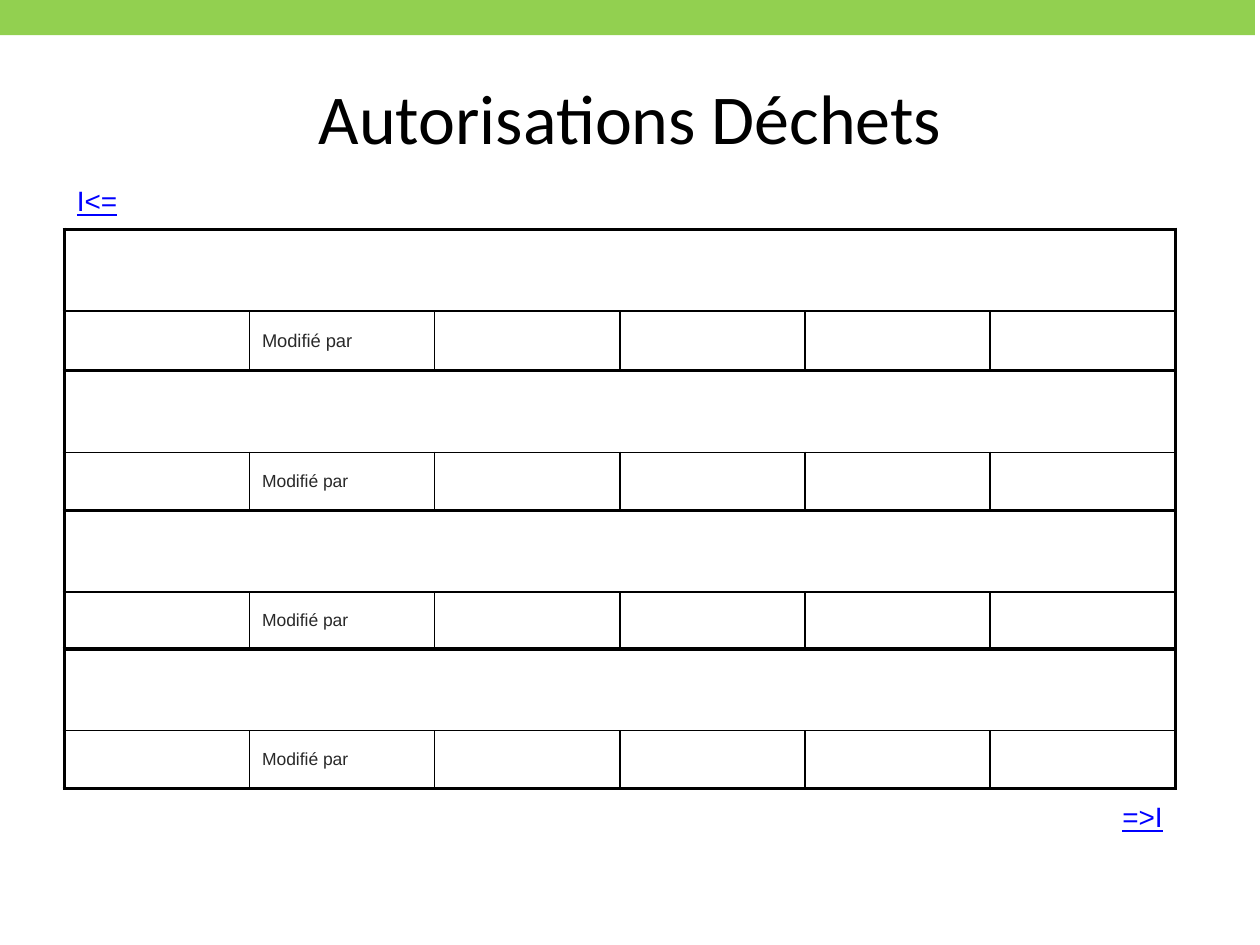
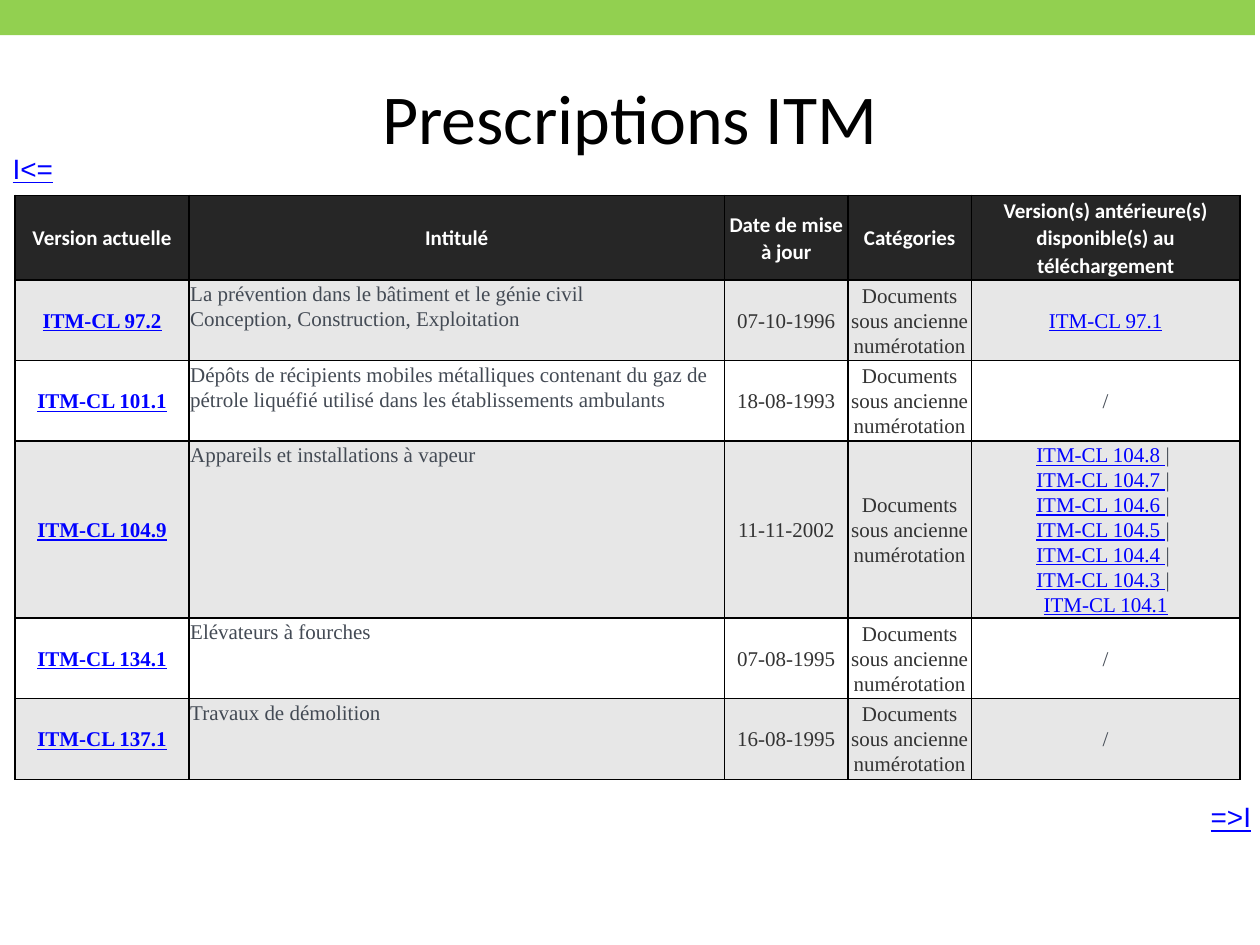
"""Build the waste authorisation and ITM prescription slides."""
from dataclasses import dataclass
from typing import Any

from lxml.etree import SubElement
from pptx import Presentation
from pptx.dml.color import RGBColor
from pptx.enum.shapes import MSO_SHAPE
from pptx.enum.text import MSO_ANCHOR, PP_ALIGN
from pptx.oxml.ns import qn
from pptx.slide import Slide
from pptx.table import Table, _Cell
from pptx.util import Inches, Pt

COLORS = {
    "band": "92D050", "black": "000000", "white": "FFFFFF", "link": "0000FF",
    "label": "292929", "header": "262626", "stripe": "E7E7E7",
    "body": "434A54", "detail": "333333",
}
PLAIN_TABLE_STYLE = "{2D5ABB26-0587-4C30-8999-92F81FD0307C}"
THIN, THICK = 1, 2.25
SIDES = ("L", "R", "T", "B")


@dataclass(frozen=True)
class Look:
    color: str
    size: float = 12
    name: str = "Times New Roman"
    bold: bool = False
    underline: bool = False


@dataclass(frozen=True)
class Span:
    text: str
    look: Look


@dataclass(frozen=True)
class Regulation:
    current: str
    heading: str
    updated: str
    earlier: tuple[str, ...] = ()


@dataclass(frozen=True)
class NavStrip:
    text: str
    left: float
    top: float
    height: float
    columns: tuple[float, ...]
    column: int
    align: PP_ALIGN


TITLE = Look("black", 40, "Calibri")
NAV = Look("link", 16, "Arial", underline=True)
HEADER = Look("white", 12, "Calibri", bold=True)
CURRENT = Look("link", bold=True, underline=True)
EARLIER = Look("link", underline=True)
BODY = Look("body")
DETAIL = Look("detail")

BACK, NEXT = "I<=", "=>I"
BAND_HEIGHTS = ((0.65, 0.47), (0.65, 0.46), (0.65, 0.45), (0.65, 0.46))
MODIFIED_SIZES = (10.5, 10, 10, 10)
NAV_STRIPS = (
    NavStrip(BACK, 0, 0.99, 0.71, (1.4, 1.4, 1.93, 2.38, 1.4, 1.4), 0, PP_ALIGN.LEFT),
    NavStrip(NEXT, 0.36, 6.11, 0.77, (1.38, 0.57, 2.48, 3.04, 0.82, 1.38), 5, PP_ALIGN.RIGHT),
)
CATEGORY = "Documents sous ancienne numérotation"
HEADINGS = ("Version actuelle", "Intitulé", "Date de mise à jour", "Catégories",
            "Version(s) antérieure(s) disponible(s) au téléchargement")
REGULATIONS = (
    Regulation("ITM-CL 97.2", "La prévention dans le bâtiment et le génie civil\n"
               "Conception, Construction, Exploitation", "07-10-1996", ("ITM-CL 97.1",)),
    Regulation("ITM-CL 101.1", "Dépôts de récipients mobiles métalliques contenant du gaz de "
               "pétrole liquéfié utilisé dans les établissements ambulants", "18-08-1993"),
    Regulation("ITM-CL 104.9", "Appareils et installations à vapeur", "11-11-2002",
               tuple(f"ITM-CL 104.{number}" for number in (8, 7, 6, 5, 4, 3, 1))),
    Regulation("ITM-CL 134.1", "Elévateurs à fourches", "07-08-1995"),
    Regulation("ITM-CL 137.1", "Travaux de démolition", "16-08-1995"),
)
COMPACT_CELL = dict.fromkeys(
    ("margin_left", "margin_top", "margin_right", "margin_bottom"), Inches(0.01))
COMPACT_PARAGRAPH = {"line_spacing": 1.07, "space_after": Pt(8)}


def apply_format(target: Any, values: dict[str, Any]) -> None:
    """Set every given attribute on the target."""
    for attribute, value in values.items():
        setattr(target, attribute, value)


def apply_look(font: Any, look: Look) -> None:
    """Give a font its face, size, emphasis and colour."""
    apply_format(font, {"name": look.name, "size": Pt(look.size),
                        "bold": look.bold, "underline": look.underline})
    font.color.rgb = RGBColor.from_string(COLORS[look.color])


def paint(fill: Any, color: str) -> None:
    """Apply a solid fill from the palette."""
    fill.solid()
    fill.fore_color.rgb = RGBColor.from_string(COLORS[color])


def write_cell(cell: _Cell, spans: list[Span], align: PP_ALIGN = PP_ALIGN.CENTER,
               anchor: MSO_ANCHOR = MSO_ANCHOR.MIDDLE) -> None:
    """Write styled spans, turning newlines into line breaks."""
    cell.vertical_anchor = anchor
    paragraph = cell.text_frame.paragraphs[0]
    paragraph.alignment = align
    for span in spans:
        for index, line in enumerate(span.text.split("\n")):
            if index:
                paragraph.add_line_break()
            if line:
                run = paragraph.add_run()
                run.text = line
                apply_look(run.font, span.look)


def draw_borders(cell: _Cell, widths: dict[str, float]) -> None:
    """Draw black borders on the given sides, in schema order."""
    properties = cell._tc.get_or_add_tcPr()
    for side in SIDES:
        if side in widths:
            line = SubElement(properties, qn(f"a:ln{side}"), w=str(Pt(widths[side])))
            solid = SubElement(line, qn("a:solidFill"))
            SubElement(solid, qn("a:srgbClr"), val=COLORS["black"])


def add_grid(slide: Slide, left: float, top: float, columns: tuple[float, ...],
             heights: tuple[float, ...]) -> Table:
    """Add an unstyled table with the given column widths and row heights."""
    table = slide.shapes.add_table(
        len(heights), len(columns), Inches(left), Inches(top),
        Inches(sum(columns)), Inches(sum(heights))).table
    apply_format(table, {"first_row": False, "horz_banding": False})
    table._tbl.tblPr.find(qn("a:tableStyleId")).text = PLAIN_TABLE_STYLE
    for column, width in zip(table.columns, columns):
        column.width = Inches(width)
    for row, height in zip(table.rows, heights):
        row.height = Inches(height)
    return table


def add_titled_slide(deck: Any, title: str) -> Slide:
    """Add a slide with the shared title style."""
    slide = deck.slides.add_slide(deck.slide_layouts[5])
    heading = slide.shapes.title
    apply_format(heading, {"left": Inches(0.5), "top": Inches(0.3),
                           "width": Inches(9), "height": Inches(1.25)})
    heading.text_frame.text = title
    heading.text_frame.vertical_anchor = MSO_ANCHOR.MIDDLE
    paragraph = heading.text_frame.paragraphs[0]
    paragraph.alignment = PP_ALIGN.CENTER
    apply_look(paragraph.runs[0].font, TITLE)
    return slide


def add_master_band(deck: Any, slide: Slide) -> None:
    """Place the green top band on the slide master."""
    band = slide.shapes.add_shape(MSO_SHAPE.RECTANGLE, 0, 0, Inches(9.96), Inches(0.28))
    band.shadow.inherit = False
    paint(band.fill, "band")
    band.line.fill.background()
    band.element.nvSpPr.cNvPr.id = 20
    deck.slide_master.shapes.element.append(band.element)


def add_waste_table(slide: Slide) -> None:
    """Add the authorisation form with its navigation rows."""
    heights = (0.43, *(height for pair in BAND_HEIGHTS for height in pair), 0.47)
    table = add_grid(slide, 0.51, 1.39, (1.47,) * 6, heights)
    last_row, last_column = len(heights) - 1, 5
    for column in range(last_column + 1):
        draw_borders(table.cell(0, column), {"B": THICK})
        draw_borders(table.cell(last_row, column), {"T": THICK})
    write_cell(table.cell(0, 0), [Span(BACK, NAV)], PP_ALIGN.LEFT)
    write_cell(table.cell(last_row, last_column), [Span(NEXT, NAV)], PP_ALIGN.RIGHT)
    for band, size in enumerate(MODIFIED_SIZES):
        entry, details = 2 * band + 1, 2 * band + 2
        table.cell(entry, 0).merge(table.cell(entry, last_column))
        draw_borders(table.cell(entry, 0), {"L": THICK, "R": THICK, "T": THICK, "B": THIN})
        draw_borders(table.cell(entry, last_column), {"R": THICK})
        for column in range(last_column + 1):
            draw_borders(table.cell(details, column), {
                "L": THIN if column else THICK,
                "R": THIN if column < last_column else THICK,
                "T": THIN, "B": THICK})
        write_cell(table.cell(details, 1),
                   [Span("Modifié par", Look("label", size, "Arial"))], PP_ALIGN.LEFT)


def add_nav_strip(slide: Slide, strip: NavStrip) -> None:
    """Add a one-row borderless strip holding a navigation mark."""
    table = add_grid(slide, strip.left, strip.top, strip.columns, (strip.height,))
    write_cell(table.cell(0, strip.column), [Span(strip.text, NAV)], strip.align)


def earlier_spans(versions: tuple[str, ...]) -> list[Span]:
    """List earlier versions as marks separated by bars, or a slash if none."""
    if not versions:
        return [Span("/", BODY)]
    spans = []
    for version in versions[:-1]:
        spans += [Span(f"{version} ", EARLIER), Span("| \n", BODY)]
    return [*spans, Span(versions[-1], EARLIER)]


def add_prescription_table(slide: Slide) -> None:
    """Add the striped list of prescriptions."""
    rows = [[[Span(heading, HEADER)] for heading in HEADINGS]]
    rows += [[[Span(item.current, CURRENT)], [Span(item.heading, BODY)],
              [Span(item.updated, DETAIL)], [Span(CATEGORY, DETAIL)],
              earlier_spans(item.earlier)] for item in REGULATIONS]
    table = add_grid(slide, 0.12, 1.55, (1.38, 4.25, 0.98, 0.98, 2.13), (0.64,) * len(rows))
    for row, contents in enumerate(rows):
        color = "header" if row == 0 else "stripe" if row % 2 else "white"
        for column, spans in enumerate(contents):
            cell = table.cell(row, column)
            apply_format(cell, COMPACT_CELL)
            draw_borders(cell, dict.fromkeys(SIDES, THIN))
            paint(cell.fill, color)
            if row and column == 1:
                write_cell(cell, spans, PP_ALIGN.LEFT, MSO_ANCHOR.TOP)
            else:
                write_cell(cell, spans)
            apply_format(cell.text_frame.paragraphs[0], COMPACT_PARAGRAPH)


def main() -> None:
    """Build and save the deck."""
    deck = Presentation()
    apply_format(deck, {"slide_width": Inches(10), "slide_height": Inches(7.5)})
    waste = add_titled_slide(deck, "Autorisations Déchets")
    add_master_band(deck, waste)
    add_waste_table(waste)
    prescriptions = add_titled_slide(deck, "Prescriptions ITM")
    for strip in NAV_STRIPS:
        add_nav_strip(prescriptions, strip)
    add_prescription_table(prescriptions)
    deck.save("out.pptx")


if __name__ == "__main__":
    main()
